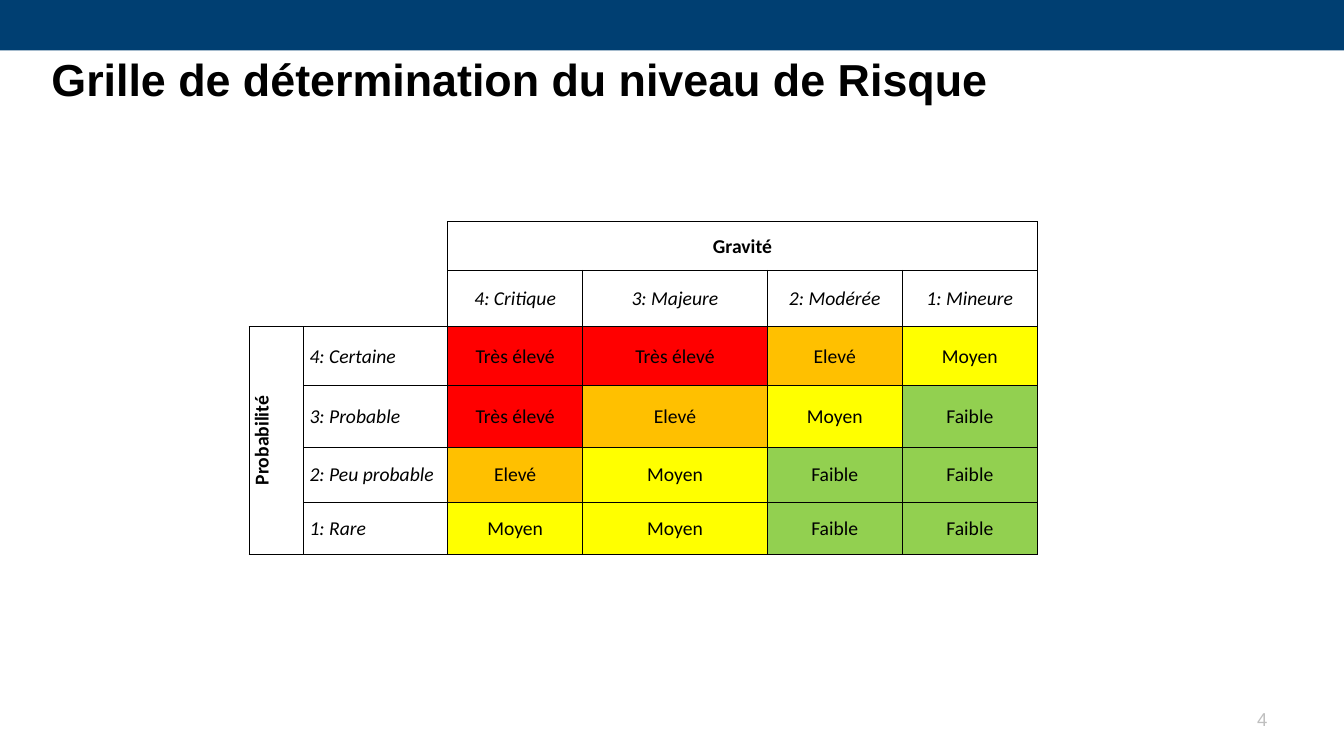
import pptx
import pptx.util
import pptx.dml.color
import pptx.enum.shapes
import pptx.enum.text
import pptx.oxml
import pptx.oxml.ns

Inches, Pt = pptx.util.Inches, pptx.util.Pt
ALIGN, ANCHOR = pptx.enum.text.PP_ALIGN, pptx.enum.text.MSO_ANCHOR

TITLE = "Grille de détermination du niveau de Risque"
PAGE = "4"
SEVERITY = "Gravité"
SEVERITIES = ["4: Critique", "3: Majeure", "2: Modérée", "1: Mineure"]
PROBABILITY = "Probabilité"
RISKS = [
    ("4: Certaine", ["Très élevé", "Très élevé", "Elevé", "Moyen"]),
    ("3: Probable", ["Très élevé", "Elevé", "Moyen", "Faible"]),
    ("2: Peu probable", ["Elevé", "Moyen", "Faible", "Faible"]),
    ("1: Rare", ["Moyen", "Moyen", "Faible", "Faible"]),
]
COLORS = {
    "bar": "003F72", "text": "000000", "page": "BFBFBF",
    "Très élevé": "FF0000", "Elevé": "FFC000", "Moyen": "FFFF00", "Faible": "92D050",
}
COLS = [0.54, 1.43, 1.34, 1.83, 1.34, 1.34]
ROWS = [0.48, 0.56, 0.58, 0.62, 0.54, 0.52]
HEAD = 2


def color(name):
    return pptx.dml.color.RGBColor.from_string(COLORS[name])


def style(p, size, face, name, align, bold=False, italic=False):
    p.alignment = align
    p.font.size, p.font.name = Pt(size), face
    p.font.bold, p.font.italic = bold, italic
    p.font.color.rgb = color(name)


def place(sp, left, top, width, height):
    sp.left, sp.top = Inches(left), Inches(top)
    sp.width, sp.height = Inches(width), Inches(height)


def is_corner(row, col):
    return 0 <= row < HEAD and 0 <= col < HEAD


def in_grid(row, col):
    return 0 <= row < len(ROWS) and 0 <= col < len(COLS)


def draw_borders(cell, row, col):
    sides = {"L": (row, col - 1), "R": (row, col + 1), "T": (row - 1, col), "B": (row + 1, col)}
    tcPr = cell._tc.get_or_add_tcPr()
    for side, near in sides.items():
        shown = not is_corner(row, col) or (in_grid(*near) and not is_corner(*near))
        fill = f'<a:solidFill><a:srgbClr val="{COLORS["text"]}"/></a:solidFill>' if shown else "<a:noFill/>"
        tcPr.append(pptx.oxml.parse_xml(
            f'<a:ln{side} {pptx.oxml.ns.nsdecls("a")} w="6350">{fill}</a:ln{side}>'))


def write(cell, text, align=ALIGN.CENTER, bold=False, italic=False):
    cell.text = text
    style(cell.text_frame.paragraphs[0], 14, "Calibri", "text", align, bold, italic)


prs = pptx.Presentation()
prs.slide_width, prs.slide_height = Inches(13.33), Inches(7.5)
s = prs.slides.add_slide(prs.slide_layouts[5])

bar = s.shapes.add_shape(pptx.enum.shapes.MSO_SHAPE.RECTANGLE, 0, 0, prs.slide_width, Inches(0.5))
bar.shadow.inherit = False
bar.fill.solid()
bar.fill.fore_color.rgb = color("bar")
bar.line.fill.background()

title = s.shapes.title
place(title, 0.51, 0.51, 11.76, 0.62)
tf = title.text_frame
tf.text = TITLE
tf.margin_left = tf.margin_right = tf.margin_top = 0
tf.margin_bottom = Inches(0.05)
tf.vertical_anchor = ANCHOR.TOP
tf.auto_size = pptx.enum.text.MSO_AUTO_SIZE.NONE
style(tf.paragraphs[0], 32, "Arial", "text", ALIGN.LEFT, bold=True)

page = s.shapes.add_textbox(Inches(9.56), Inches(6.93), Inches(3.11), Inches(0.4))
tf = page.text_frame
tf.word_wrap = True
tf.vertical_anchor = ANCHOR.MIDDLE
tf.text = PAGE
style(tf.paragraphs[0], 13.3, "Arial", "page", ALIGN.RIGHT)

grid = s.shapes.add_table(len(ROWS), len(COLS), Inches(2.47), Inches(2.2),
                          Inches(sum(COLS)), Inches(sum(ROWS))).table
grid.first_row = grid.horz_banding = False
for column, width in zip(grid.columns, COLS):
    column.width = Inches(width)
for line, height in zip(grid.rows, ROWS):
    line.height = Inches(height)

for row in range(len(ROWS)):
    for col in range(len(COLS)):
        cell = grid.cell(row, col)
        cell.margin_left = cell.margin_right = cell.margin_top = Inches(0.01)
        cell.margin_bottom = 0
        cell.vertical_anchor = ANCHOR.MIDDLE
        draw_borders(cell, row, col)
        cell.fill.background()

severity = grid.cell(0, HEAD)
severity.merge(grid.cell(0, len(COLS) - 1))
write(severity, SEVERITY, bold=True)
probability = grid.cell(HEAD, 0)
probability.merge(grid.cell(len(ROWS) - 1, 0))
write(probability, PROBABILITY, bold=True)
probability._tc.get_or_add_tcPr().set("vert", "vert270")

for col, label in enumerate(SEVERITIES, HEAD):
    write(grid.cell(1, col), label, italic=True)
for row, (label, levels) in enumerate(RISKS, HEAD):
    cell = grid.cell(row, 1)
    write(cell, label, ALIGN.LEFT, italic=True)
    cell.margin_left = Inches(0.06)
    for col, level in enumerate(levels, HEAD):
        cell = grid.cell(row, col)
        write(cell, level)
        cell.fill.solid()
        cell.fill.fore_color.rgb = color(level)

prs.save("out.pptx")
